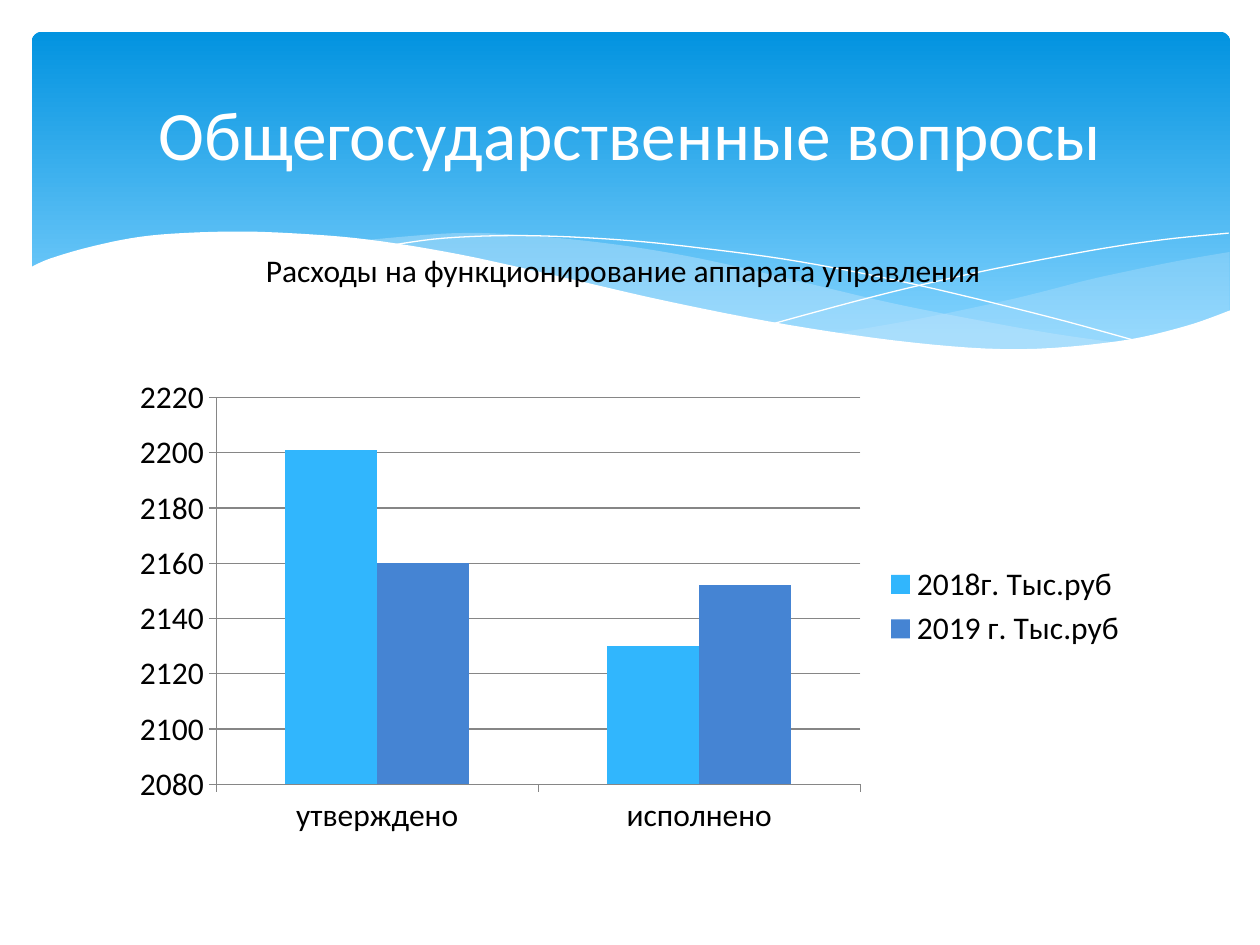
from dataclasses import dataclass
from typing import Optional

from lxml.etree import SubElement
from pptx import Presentation
from pptx.chart.data import CategoryChartData
from pptx.dml.color import RGBColor as Color
from pptx.enum.chart import XL_CHART_TYPE as ChartType
from pptx.enum.chart import XL_LEGEND_POSITION as LegendPosition
from pptx.enum.chart import XL_TICK_MARK as TickMark
from pptx.enum.shapes import MSO_SHAPE as Preset
from pptx.enum.text import MSO_ANCHOR as Anchor
from pptx.enum.text import PP_ALIGN as Align
from pptx.oxml.ns import qn
from pptx.util import Cm, Pt

Point = tuple[float, float]
Box = tuple[float, float, float, float]


@dataclass(frozen=True)
class Theme:
    font: str = "Calibri"
    title_size: float = 39.6
    body_size: float = 18
    white: str = "FFFFFF"
    black: str = "000000"
    axis: str = "868686"
    banner_top: str = "0293E0"
    banner_bottom: str = "83D3FE"
    wave: str = "C6E7FC"


@dataclass(frozen=True)
class Wave:
    curves: list[list[Point]]
    fill: Optional[str] = None
    opacity: int = 100


@dataclass(frozen=True)
class Series:
    name: str
    values: tuple[int, int]
    color: str


THEME = Theme()

WAVES = [
    Wave([[(24.79, 5.08), (23.75, 5.26), (22.63, 5.49), (21.87, 5.66),
           (20.45, 6.02), (18.52, 6.43), (16.79, 6.73)],
          [(16.79, 6.73), (17.91, 6.88), (19.23, 7.01), (20.4, 7.06),
           (21.69, 7.01), (22.78, 6.86), (23.75, 6.65), (24.46, 6.4),
           (24.79, 6.27)]], THEME.wave, 29),
    Wave([[(22.68, 6.93), (21.26, 6.73), (19.69, 6.45), (17.93, 6.1),
           (15.98, 5.64), (14.1, 5.21), (12.42, 4.93), (10.67, 4.75),
           (9.17, 4.7), (7.26, 4.85)],
          [(7.26, 4.85), (9.19, 5.16), (11.4, 5.64), (13.46, 6.1),
           (15.7, 6.55), (17.65, 6.86), (19.63, 7.04), (21.03, 7.06),
           (22.68, 6.93)]], THEME.wave, 40),
    Wave([[(7.85, 4.95), (8.97, 4.8), (10.57, 4.75), (12.42, 4.83),
           (14.12, 5), (16.15, 5.28), (18.47, 5.74), (21.11, 6.38),
           (23.04, 6.91)]]),
    Wave([[(15.57, 6.53), (17.65, 5.97), (19.71, 5.49), (22, 5.05),
           (23.47, 4.83), (24.77, 4.7)]]),
    Wave([[(24.82, 6.25), (23.88, 6.58), (22.53, 6.88), (20.55, 7.04),
           (18.44, 6.91), (15.9, 6.55), (13.44, 6.07), (11.35, 5.59),
           (9.27, 5.13), (7.42, 4.83), (5.84, 4.7), (4.5, 4.67),
           (3.02, 4.75), (1.93, 4.95), (1.02, 5.21), (0.58, 5.41)],
          [(0.58, 8.36), (24.82, 8.36)]], THEME.white),
]

CATEGORIES = ("утверждено", "исполнено")
SERIES = [
    Series("2018г. Тыс.руб", (2201, 2130), "31B6FD"),
    Series("2019 г. Тыс.руб", (2160, 2152), "4584D3"),
]


def rgb(value: str) -> Color:
    return Color.from_string(value)


def place(box: Box) -> list[Cm]:
    return [Cm(length) for length in box]


def smooth_curve(points: list[Point], steps: int = 6) -> list[Point]:
    if len(points) < 3:
        return points
    padded = [points[0], *points, points[-1]]
    curve = [points[0]]
    for a, b, c, d in zip(padded, padded[1:], padded[2:], padded[3:]):
        for step in range(1, steps + 1):
            t = step / steps
            x, y = (
                (2 * q + (r - p) * t + (2 * p - 5 * q + 4 * r - s) * t ** 2
                 + (3 * q - p - 3 * r + s) * t ** 3) / 2
                for p, q, r, s in zip(a, b, c, d)
            )
            curve.append((x, y))
    return curve


def add_banner(slide, box: Box) -> None:
    shape = slide.shapes.add_shape(Preset.ROUNDED_RECTANGLE, *place(box))
    shape.adjustments[0] = 0.03
    shape.shadow.inherit = False
    shape.line.fill.background()
    shape.fill.gradient()
    shape.fill.gradient_angle = 270
    stops = ((0, THEME.banner_top), (0.9, THEME.banner_bottom))
    for stop, (position, color) in zip(shape.fill.gradient_stops, stops):
        stop.position = position
        stop.color.rgb = rgb(color)


def add_wave(slide, wave: Wave) -> None:
    points = [(Cm(x), Cm(y)) for curve in wave.curves for x, y in smooth_curve(curve)]
    builder = slide.shapes.build_freeform(*points[0])
    builder.add_line_segments(points[1:], close=wave.fill is not None)
    shape = builder.convert_to_shape()
    shape.shadow.inherit = False
    if wave.fill is None:
        shape.fill.background()
        shape.line.color.rgb = rgb(THEME.white)
        shape.line.width = Pt(0)
        return
    shape.line.fill.background()
    shape.fill.solid()
    shape.fill.fore_color.rgb = rgb(wave.fill)
    if wave.opacity < 100:
        color = shape.fill._xPr.find(qn("a:solidFill"))[0]
        SubElement(color, qn("a:alpha")).set("val", str(wave.opacity * 1000))


def add_text(slide, text: str, box: Box, *, size: float, color: str,
             align: Align = Align.LEFT, anchor: Anchor = Anchor.TOP,
             wrap: bool = True) -> None:
    frame = slide.shapes.add_textbox(*place(box)).text_frame
    frame.word_wrap = wrap
    frame.vertical_anchor = anchor
    paragraph = frame.paragraphs[0]
    paragraph.alignment = align
    run = paragraph.add_run()
    run.text = text
    run.font.name = THEME.font
    run.font.size = Pt(size)
    run.font.color.rgb = rgb(color)


def add_expense_chart(slide, box: Box) -> None:
    data = CategoryChartData()
    data.categories = CATEGORIES
    for series in SERIES:
        data.add_series(series.name, series.values)
    chart = slide.shapes.add_chart(ChartType.COLUMN_CLUSTERED, *place(box), data).chart
    chart.has_title = False
    chart.font.name = THEME.font
    chart.font.size = Pt(THEME.body_size)
    chart.font.color.rgb = rgb(THEME.black)
    chart.has_legend = True
    chart.legend.position = LegendPosition.RIGHT
    chart.legend.include_in_layout = False

    plot = chart.plots[0]
    plot.gap_width = 150
    plot.vary_by_categories = False
    for drawn, series in zip(plot.series, SERIES):
        drawn.format.fill.solid()
        drawn.format.fill.fore_color.rgb = rgb(series.color)

    value_axis = chart.value_axis
    value_axis.minimum_scale, value_axis.maximum_scale = 2080, 2220
    value_axis.major_unit = 20
    value_axis.has_major_gridlines = True
    for axis in (chart.category_axis, value_axis):
        axis.major_tick_mark = TickMark.OUTSIDE
    for part in (chart.category_axis, value_axis, value_axis.major_gridlines):
        part.format.line.color.rgb = rgb(THEME.axis)
        part.format.line.width = Pt(0.75)


def main() -> None:
    presentation = Presentation()
    presentation.slide_width, presentation.slide_height = Cm(25.4), Cm(19.05)
    slide = presentation.slides.add_slide(presentation.slide_layouts[6])
    add_banner(slide, (0.64, 0.64, 24.16, 6.86))
    for wave in WAVES:
        add_wave(slide, wave)
    add_expense_chart(slide, (2.41, 7.44, 20.57, 9.58))
    add_text(slide, "Общегосударственные вопросы", (1.27, 0.94, 22.86, 3.48),
             size=THEME.title_size, color=THEME.white,
             align=Align.CENTER, anchor=Anchor.MIDDLE)
    add_text(slide, "Расходы на функционирование аппарата управления",
             (5.11, 4.93, 15.37, 1.02), size=THEME.body_size,
             color=THEME.black, wrap=False)
    presentation.save("out.pptx")


if __name__ == "__main__":
    main()
